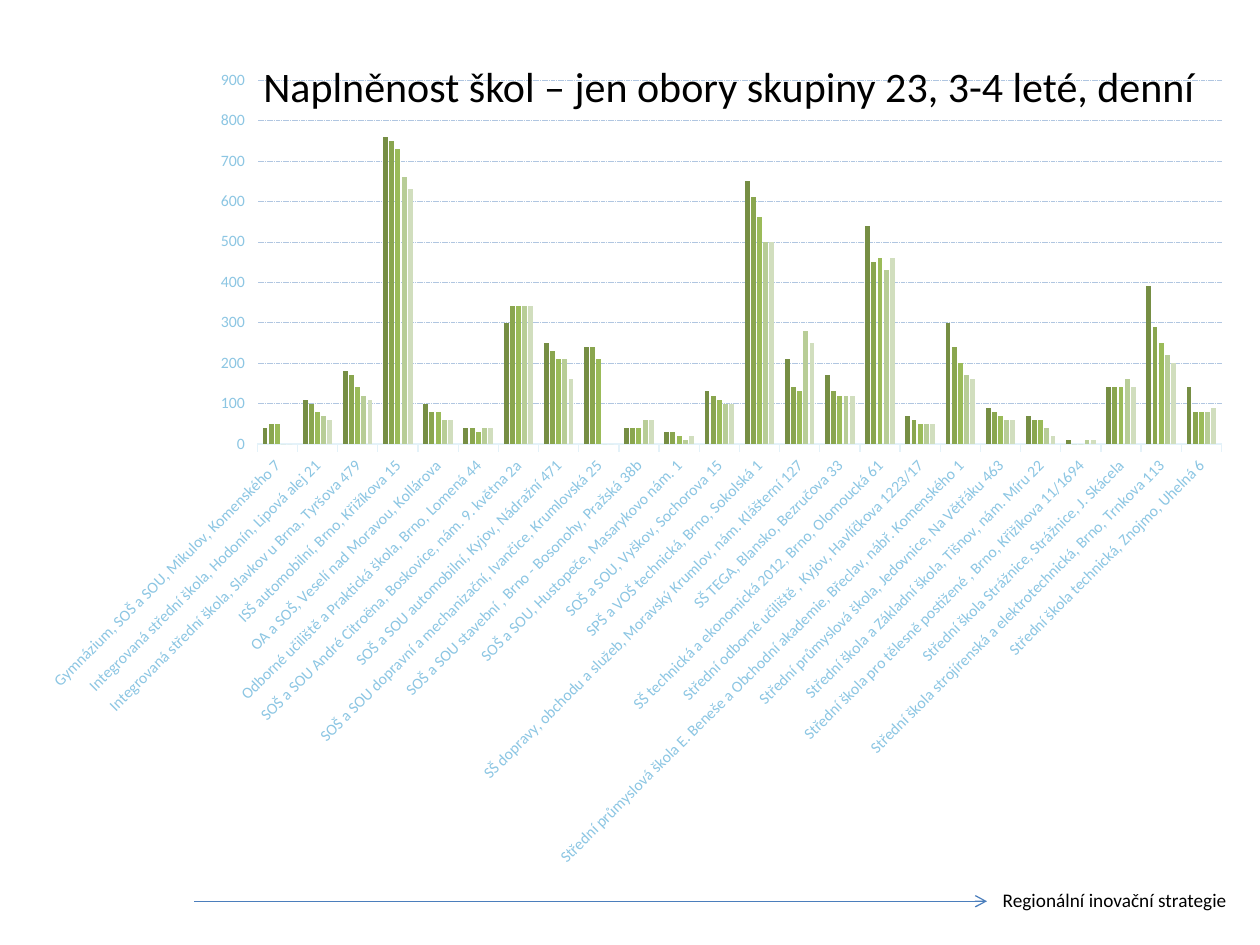
from lxml import etree
from pptx import Presentation
from pptx import util as u
from pptx.chart.data import CategoryChartData
from pptx.dml.color import RGBColor
from pptx.enum import chart as ch, dml, shapes, text
from pptx.oxml import parse_xml
from pptx.oxml.ns import nsdecls, qn

Pt = u.Pt
THEME = {
    "font": "Calibri",
    "text": "000000",
    "arrow": "4B7EBC",
    "label": "8CC6E3",
    "axis": "E4F2F9",
    "grid": "B0C6E1",
    "series": ["768E44", "8AA64F", "9BBB59", "B8CD97", "D1DEBE"],
    "title_size": 24,
    "footer_size": 11,
    "label_size": 9,
}

SCHOOLS = [  # name, then pupils in five successive series
    ("Gymnázium, SOŠ a SOU, Mikulov, Komenského 7", 40, 50, 50, 0, 0),
    ("Integrovaná střední škola, Hodonín, Lipová alej 21", 110, 100, 80, 70, 60),
    ("Integrovaná střední škola, Slavkov u Brna, Tyršova 479", 180, 170, 140, 120, 110),
    ("ISŠ automobilní, Brno, Křižíkova 15", 760, 750, 730, 660, 630),
    ("OA a SOŠ, Veselí nad Moravou, Kollárova", 100, 80, 80, 60, 60),
    ("Odborné učiliště a Praktická škola, Brno, Lomená 44", 40, 40, 30, 40, 40),
    ("SOŠ a SOU André Citroëna, Boskovice, nám. 9. května 2a", 300, 340, 340, 340, 340),
    ("SOŠ a SOU automobilní, Kyjov, Nádražní 471", 250, 230, 210, 210, 160),
    ("SOŠ a SOU dopravní a mechanizační, Ivančice, Krumlovská 25", 240, 240, 210, 0, 0),
    ("SOŠ a SOU stavební , Brno - Bosonohy, Pražská 38b", 40, 40, 40, 60, 60),
    ("SOŠ a SOU, Hustopeče, Masarykovo nám. 1", 30, 30, 20, 10, 20),
    ("SOŠ a SOU, Vyškov, Sochorova 15", 130, 120, 110, 100, 100),
    ("SPŠ a VOŠ technická, Brno, Sokolská 1", 650, 610, 560, 500, 500),
    ("SŠ dopravy, obchodu a služeb, Moravský Krumlov, nám. Klášterní 127",
     210, 140, 130, 280, 250),
    ("SŠ TEGA, Blansko, Bezručova 33", 170, 130, 120, 120, 120),
    ("SŠ technická a ekonomická 2012, Brno, Olomoucká 61", 540, 450, 460, 430, 460),
    ("Střední odborné učiliště , Kyjov, Havlíčkova 1223/17", 70, 60, 50, 50, 50),
    ("Střední průmyslová škola E. Beneše a Obchodní akademie, Břeclav, nábř. Komenského 1",
     300, 240, 200, 170, 160),
    ("Střední průmyslová škola, Jedovnice, Na Větřáku 463", 90, 80, 70, 60, 60),
    ("Střední škola a Základní škola, Tišnov, nám. Míru 22", 70, 60, 60, 40, 20),
    ("Střední škola pro tělesně postižené , Brno, Křižíkova 11/1694", 10, 0, 0, 10, 10),
    ("Střední škola Strážnice, Strážnice, J. Skácela", 140, 140, 140, 160, 140),
    ("Střední škola strojírenská a elektrotechnická, Brno, Trnkova 113",
     390, 290, 250, 220, 200),
    ("Střední škola technická, Znojmo, Uhelná 6", 140, 80, 80, 80, 90),
]


def rgb(name):
    return RGBColor.from_string(THEME[name])


def write_text(sp, content, size):
    """Fill a shape with one black, left-aligned paragraph and no insets."""
    tf = sp.text_frame
    tf.margin_left = tf.margin_right = tf.margin_top = tf.margin_bottom = 0
    tf.vertical_anchor = text.MSO_ANCHOR.MIDDLE
    p = tf.paragraphs[0]
    p.text = content
    p.alignment = text.PP_ALIGN.LEFT
    p.font.name = THEME["font"]
    p.font.size = Pt(size)
    p.font.color.rgb = rgb("text")


prs = Presentation()
prs.slide_width, prs.slide_height = Pt(720), Pt(540)
s = prs.slides.add_slide(prs.slide_layouts[5])

# Footer arrow and label
arrow = s.shapes.add_connector(
    shapes.MSO_CONNECTOR.STRAIGHT, Pt(111), Pt(515), Pt(564), Pt(515))
arrow.line.color.rgb = rgb("arrow")
arrow.line.width = Pt(0.75)
etree.SubElement(arrow.line._get_or_add_ln(), qn("a:tailEnd"), type="arrow")
etree.SubElement(arrow._element.spPr, qn("a:effectLst"))

footer = s.shapes.add_textbox(Pt(573), Pt(507.5), Pt(130.5), Pt(14))
footer.text_frame.word_wrap = False
write_text(footer, "Regionální inovační strategie", THEME["footer_size"])

# Chart of pupils per school
data = CategoryChartData()
names, *columns = zip(*SCHOOLS)
data.categories = names
for i, values in enumerate(columns, 1):
    data.add_series(f"Series {i}", values)
chart = s.shapes.add_chart(
    ch.XL_CHART_TYPE.COLUMN_CLUSTERED, Pt(14.5), Pt(31.5), Pt(697.5), Pt(473), data).chart
chart.has_legend = False
chart.has_title = False
chart.font.name = THEME["font"]
chart.font.size = Pt(THEME["label_size"])
chart.font.color.rgb = rgb("label")

plot = chart.plots[0]
plot.gap_width, plot.overlap = 219, -27
plot.vary_by_categories = False
for series, color in zip(plot.series, THEME["series"]):
    series.format.fill.solid()
    series.format.fill.fore_color.rgb = RGBColor.from_string(color)

for axis in (chart.category_axis, chart.value_axis):
    axis.major_tick_mark = ch.XL_TICK_MARK.OUTSIDE
    axis.minor_tick_mark = ch.XL_TICK_MARK.NONE
    font = axis.tick_labels.font
    font.name, font.size = THEME["font"], Pt(THEME["label_size"])
    font.color.rgb = rgb("label")

cat = chart.category_axis
cat.format.line.color.rgb = rgb("axis")
cat.format.line.width = Pt(0.75)
cat._element.find(qn("c:txPr")).find(qn("a:bodyPr")).set("rot", "-2700000")

val = chart.value_axis
val.minimum_scale, val.maximum_scale, val.major_unit = 0, 900, 100
val.format.line.fill.background()
grid = val.major_gridlines.format.line
grid.color.rgb = rgb("grid")
grid.width = Pt(0.25)
grid.dash_style = dml.MSO_LINE.SQUARE_DOT

# Fixed inner plot area leaves room for the slanted names
area = chart._chartSpace.chart.plotArea
for old in area.findall(qn("c:layout")):
    area.remove(old)
area.insert(0, parse_xml(
    f'<c:layout {nsdecls("c")}><c:manualLayout><c:layoutTarget val="inner"/>'
    '<c:xMode val="edge"/><c:yMode val="edge"/><c:x val="0.19"/><c:y val="0.03"/>'
    '<c:w val="0.79"/><c:h val="0.44"/></c:manualLayout></c:layout>'))

# The title lies over the top of the chart
title = s.shapes.title
title.left, title.top, title.width, title.height = Pt(150.5), Pt(31.5), Pt(561.5), Pt(34.5)
write_text(title, "Naplněnost škol – jen obory skupiny 23, 3-4 leté, denní",
           THEME["title_size"])
tree = s.shapes._spTree
tree.remove(title._element)
tree.append(title._element)

prs.save("out.pptx")
